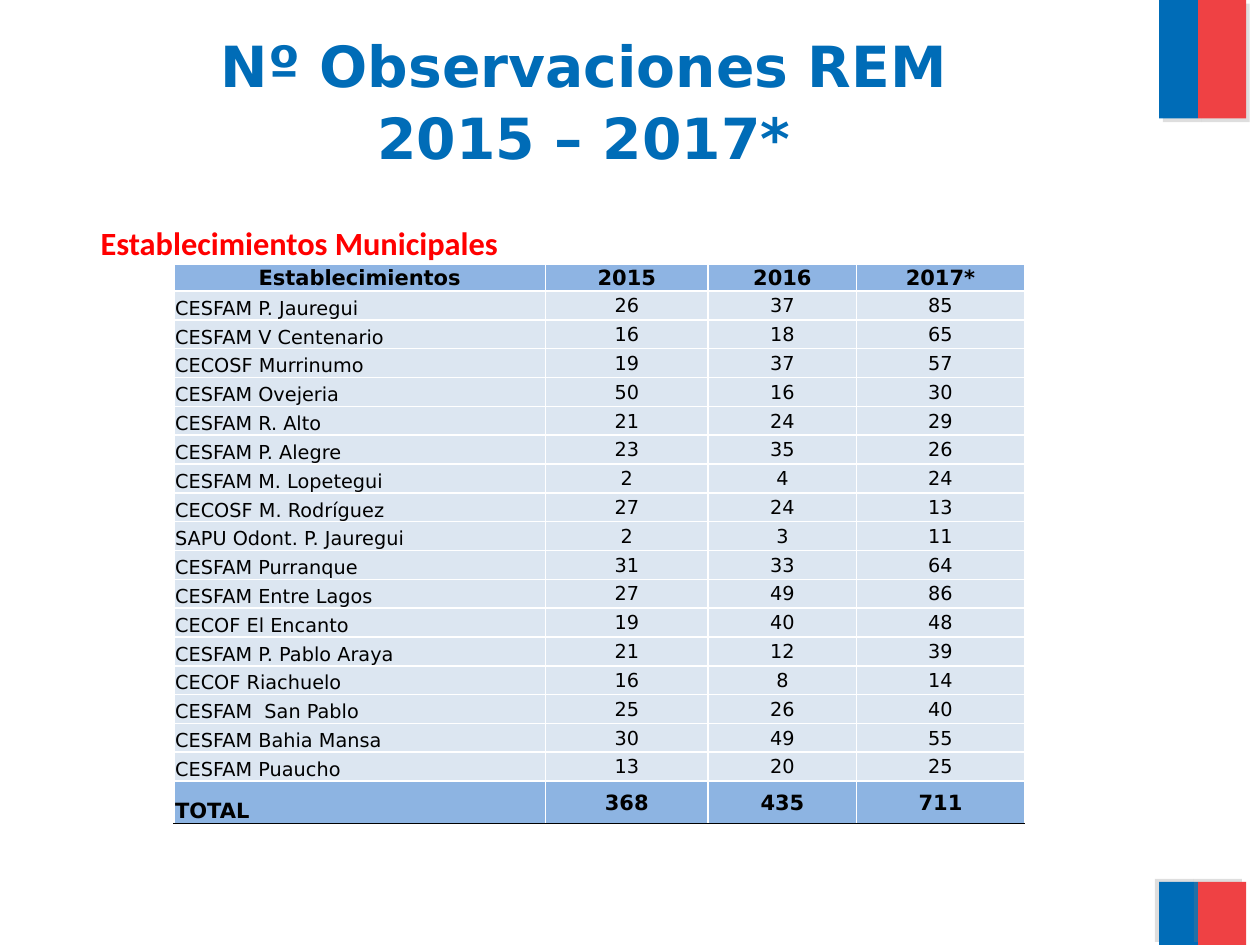
"""Build a slide tabulating REM observations by municipal establishment, 2015 to 2017."""
from dataclasses import dataclass

from lxml import etree
from pptx import Presentation
from pptx import util as u
from pptx.dml.color import RGBColor
from pptx.enum import shapes, text
from pptx.oxml import ns


@dataclass(frozen=True)
class Theme:
    blue: str = "006CB7"
    red: str = "EF4144"
    heading: str = "FF0000"
    ink: str = "000000"
    rule: str = "FFFFFF"
    header: str = "8EB4E3"
    body: str = "DCE6F1"
    total: str = "8DB4E2"
    shade: str = "808080"
    font: str = "DejaVu Sans"
    heading_font: str = "Calibri"
    title_size: float = 32.4
    heading_size: float = 18.5
    strong_size: float = 12
    body_size: float = 11


def grid(*cells):
    return [round(cell * unit) for cell in cells]


def write(paragraph, words, size, color, font, bold):
    run = paragraph.add_run()
    run.text = words
    run.font.size, run.font.name, run.font.bold = u.Pt(size), font, bold
    run.font.color.rgb = RGBColor.from_string(color)


theme = Theme()
deck = Presentation()
deck.slide_width, deck.slide_height = u.Inches(10), u.Inches(7.5)
unit = deck.slide_width / 100
slide = deck.slides.add_slide(deck.slide_layouts[6])

for top, height, angle in ((0, 9.4, 45), (70, 5, 215)):
    for left, width, color in ((92, 3.1, theme.blue), (95.1, 3.8, theme.red)):
        band = slide.shapes.add_shape(
            shapes.MSO_SHAPE.RECTANGLE, *grid(left, top, width, height))
        band.fill.solid()
        band.fill.fore_color.rgb = RGBColor.from_string(color)
        band.line.fill.background()
        band.shadow.inherit = False
        effects = band._element.spPr.find(ns.qn("a:effectLst"))
        shadow = etree.SubElement(
            effects, ns.qn("a:outerShdw"), blurRad="0", dist=str(u.Pt(3)),
            dir=str(angle * 60000), algn="ctr", rotWithShape="0")
        shade = etree.SubElement(shadow, ns.qn("a:srgbClr"), val=theme.shade)
        etree.SubElement(shade, ns.qn("a:alpha"), val="25000")

heading = slide.shapes.add_textbox(*grid(2, 17.2, 90, 3.7)).text_frame
heading.word_wrap = True
heading.paragraphs[0]._p.get_or_add_pPr().set("marL", str(grid(5)[0]))
write(heading.paragraphs[0], "Establecimientos Municipales",
      theme.heading_size, theme.heading, theme.heading_font, True)

title = slide.shapes.add_textbox(*grid(1.7, 1.7, 89.3, 12.5)).text_frame
title.word_wrap = True
headline = title.paragraphs[0]
headline.alignment = text.PP_ALIGN.CENTER
headline.line_spacing = 1.05
write(headline, "Nº Observaciones REM", theme.title_size, theme.blue, theme.font, True)
headline.add_line_break()
write(headline, "2015 – 2017*", theme.title_size, theme.blue, theme.font, True)

records = [
    ("Establecimientos", "2015", "2016", "2017*"),
    ("CESFAM P. Jauregui", 26, 37, 85),
    ("CESFAM V Centenario", 16, 18, 65),
    ("CECOSF Murrinumo", 19, 37, 57),
    ("CESFAM Ovejeria", 50, 16, 30),
    ("CESFAM R. Alto", 21, 24, 29),
    ("CESFAM P. Alegre", 23, 35, 26),
    ("CESFAM M. Lopetegui", 2, 4, 24),
    ("CECOSF M. Rodríguez", 27, 24, 13),
    ("SAPU Odont. P. Jauregui", 2, 3, 11),
    ("CESFAM Purranque", 31, 33, 64),
    ("CESFAM Entre Lagos", 27, 49, 86),
    ("CECOF El Encanto", 19, 40, 48),
    ("CESFAM P. Pablo Araya", 21, 12, 39),
    ("CECOF Riachuelo", 16, 8, 14),
    ("CESFAM  San Pablo", 25, 26, 40),
    ("CESFAM Bahia Mansa", 30, 49, 55),
    ("CESFAM Puaucho", 13, 20, 25),
    ("TOTAL", 368, 435, 711),
]
last = len(records) - 1
column_widths = grid(29.5, 12.9, 11.8, 13.3)
row_heights = grid(2, *[2.29] * (last - 1), 3.4)
observations = slide.shapes.add_table(
    len(records), len(column_widths), *grid(13.8, 21),
    sum(column_widths), sum(row_heights)).table
observations.first_row = observations.horz_banding = False
for column, width in zip(observations.columns, column_widths):
    column.width = width

for r, record in enumerate(records):
    observations.rows[r].height = row_heights[r]
    strong = r in (0, last)
    fill = {0: theme.header, last: theme.total}.get(r, theme.body)
    size = theme.strong_size if strong else theme.body_size
    for c, entry in enumerate(record):
        cell = observations.cell(r, c)
        label = c == 0 and r > 0
        cell.margin_left = cell.margin_right = cell.margin_top = grid(0.1)[0]
        cell.margin_bottom = 0
        cell.vertical_anchor = text.MSO_ANCHOR.BOTTOM if label else text.MSO_ANCHOR.MIDDLE
        for side in "LRTB":
            closing = r == last and side == "B"
            edge = etree.SubElement(
                cell._tc.get_or_add_tcPr(), ns.qn(f"a:ln{side}"),
                w=str(u.Pt(0.5 if closing else 1)))
            paint = etree.SubElement(edge, ns.qn("a:solidFill"))
            etree.SubElement(paint, ns.qn("a:srgbClr"),
                             val=theme.ink if closing else theme.rule)
        cell.fill.solid()
        cell.fill.fore_color.rgb = RGBColor.from_string(fill)
        line = cell.text_frame.paragraphs[0]
        line.alignment = text.PP_ALIGN.LEFT if label else text.PP_ALIGN.CENTER
        write(line, str(entry), size, theme.ink, theme.font, strong)

deck.save("out.pptx")
